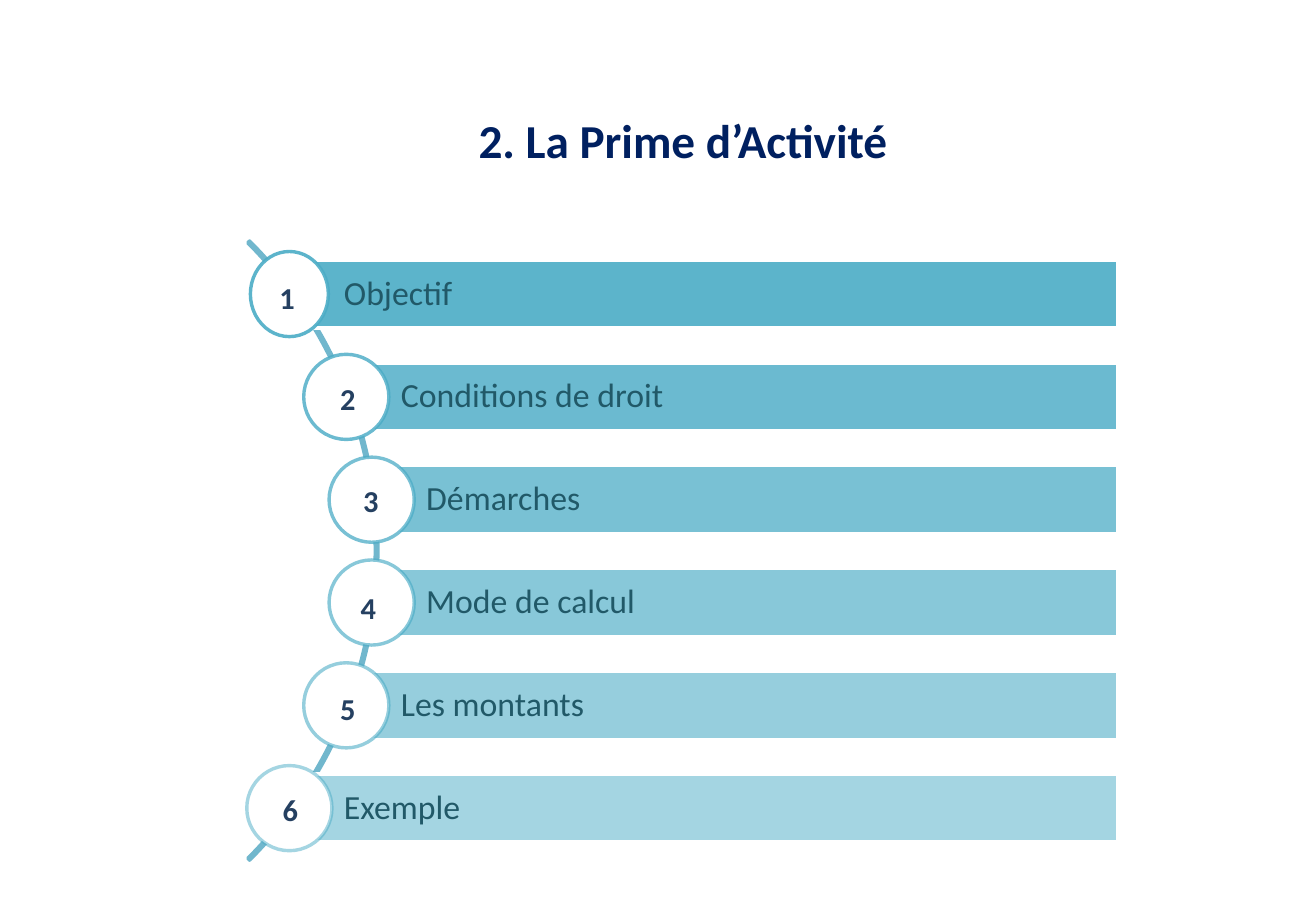
from pptx import Presentation
from pptx import util as u
from pptx.dml.color import RGBColor
from pptx.enum import shapes, text
from pptx.oxml import ns
from lxml import etree

KIND = shapes.MSO_SHAPE
TEAL, WHITE = "4BACC6", "FFFFFF"


def paint(fill, color, node=None, alpha=100):
    fill.solid()
    fill.fore_color.rgb = RGBColor.from_string(color)
    if node is not None:
        mark = node.find(".//" + ns.qn("a:srgbClr"))
        etree.SubElement(mark, ns.qn("a:alpha"), val=str(alpha * 1000))


def write(frame, words, color, **style):
    para = frame.paragraphs[0]
    run = para.add_run()
    run.text = words
    run.font.color.rgb = RGBColor.from_string(color)
    for key, value in {"name": "Calibri", **style}.items():
        setattr(run.font, key, value)
    return para


deck = Presentation()
deck.slide_width, deck.slide_height = u.Cm(27.51), u.Cm(19.05)
slide = deck.slides.add_slide(deck.slide_layouts[5])
items = slide.shapes

title = items.title
spot = {"left": 2.77, "top": 1.52, "width": 23.01, "height": 2.79}
for key, value in spot.items():
    setattr(title, key, u.Cm(value))
title.text_frame.vertical_anchor = text.MSO_ANCHOR.MIDDLE
head = write(title.text_frame, "2. La Prime d’Activité", "002060", size=u.Pt(28), bold=True)
head.alignment = text.PP_ALIGN.CENTER

arc = items.add_shape(KIND.BLOCK_ARC, u.Cm(-10.41), u.Cm(2.36), u.Cm(18.31), u.Cm(18.31))
for i, value in enumerate((189, 27, 0.003)):
    arc.adjustments[i] = value
arc.shadow.inherit = False
arc.fill.background()
paint(arc.line.fill, "71B7CD")
arc.line.width = u.Pt(2)

# label, bar left, circle width, number left, number top
rows = [
    ("Objectif", 6.05, 1.63, 5.59, 5.72),
    ("Conditions de droit", 7.24, 1.78, 6.86, 7.82),
    ("Démarches", 7.77, 1.78, 7.34, 9.96),
    ("Mode de calcul", 7.77, 1.78, 7.29, 12.19),
    ("Les montants", 7.24, 1.78, 6.86, 14.3),
    ("Exemple", 6.05, 1.78, 5.66, 16.41),
]
inset = {"margin_left": 1.14, "margin_right": 0.15, "margin_top": 0.15, "margin_bottom": 0.15}

for i, (label, left, wide, x, y) in enumerate(rows):
    top, alpha = 5.44 + 2.15 * i, 90 - 8 * i

    bar = items.add_shape(KIND.RECTANGLE, u.Cm(left), u.Cm(top), u.Cm(23.37 - left), u.Cm(1.42))
    bar.shadow.inherit = False
    paint(bar.fill, TEAL, bar.element, alpha)
    paint(bar.line.fill, WHITE)
    bar.line.width = u.Pt(2)
    frame = bar.text_frame
    frame.word_wrap = True
    frame.vertical_anchor = text.MSO_ANCHOR.MIDDLE
    for key, value in inset.items():
        setattr(frame, key, u.Cm(value))
    para = write(frame, label, "215968", size=u.Pt(20))
    para.alignment = text.PP_ALIGN.LEFT
    para.line_spacing = 0.9

    disc = items.add_shape(KIND.OVAL, u.Cm(left - wide / 2), u.Cm(top - 0.18), u.Cm(wide), u.Cm(1.78))
    disc.shadow.inherit = False
    paint(disc.line.fill, TEAL, disc.element, alpha)
    disc.line.width = u.Pt(2)
    paint(disc.fill, WHITE)

    box = items.add_textbox(u.Cm(x), u.Cm(y), u.Cm(1.1), u.Cm(1.02))
    box.text_frame.word_wrap = True
    write(box.text_frame, str(i + 1), "254061", size=u.Pt(18), bold=True)

deck.save("out.pptx")
